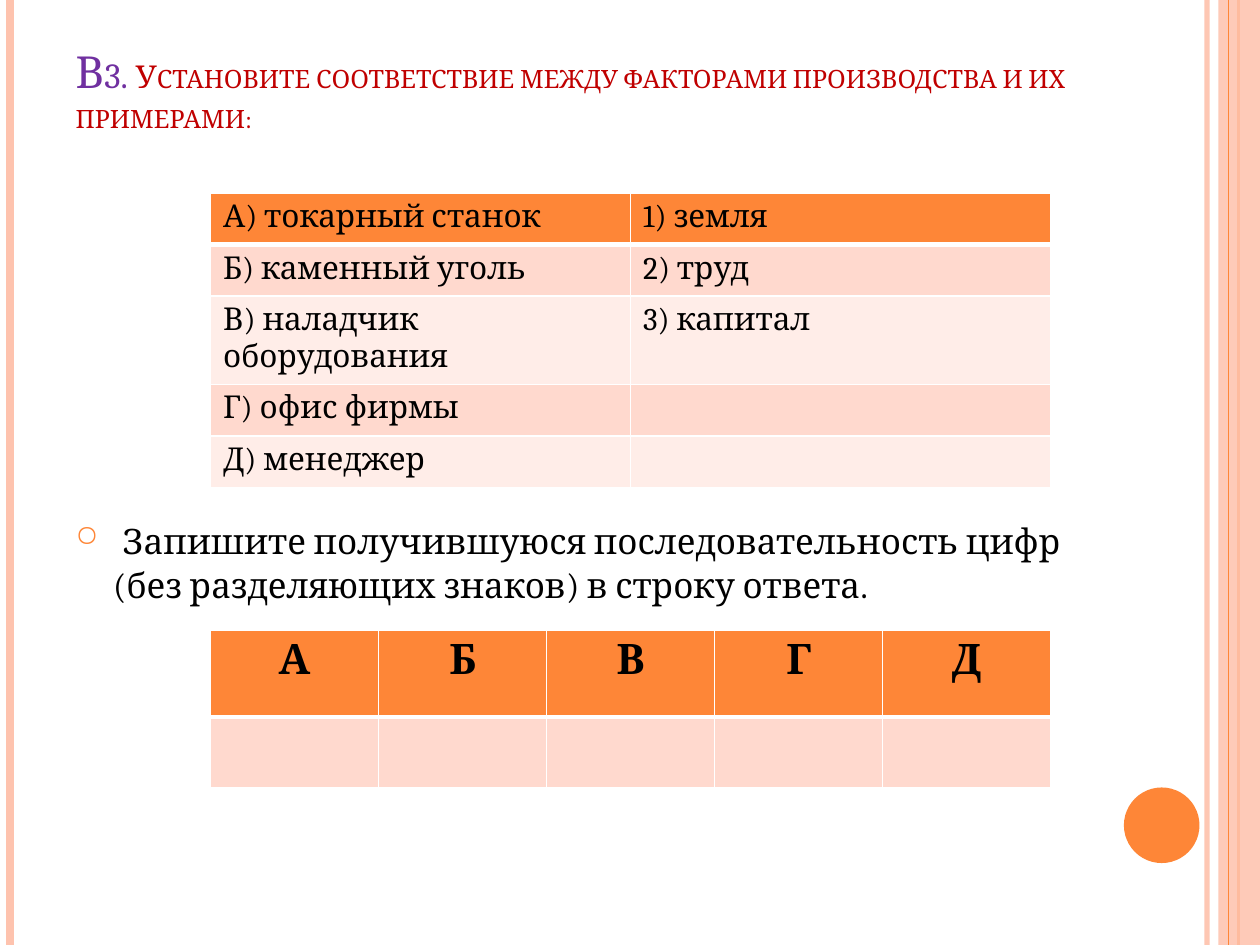
from dataclasses import dataclass

from lxml.etree import SubElement
from pptx import Presentation
from pptx.dml.color import RGBColor
from pptx.enum.shapes import MSO_CONNECTOR as Connector, MSO_SHAPE as Shape
from pptx.enum.text import MSO_ANCHOR as Anchor, MSO_AUTO_SIZE as AutoSize, PP_ALIGN as Align
from pptx.oxml.ns import qn
from pptx.util import Inches, Pt


@dataclass(frozen=True)
class Theme:
    font: str = "Cambria"
    accent: str = "FE8637"
    stripe: str = "FEC3AE"
    bands: tuple = ("FFD9CE", "FFEDE8")
    grid: str = "FFFFFF"
    ink: str = "000000"
    number: str = "7030A0"
    question: str = "C00000"
    number_size: float = 25.2
    question_size: float = 18
    cell_size: float = 18
    task_size: float = 20
    letter_size: float = 24


THEME = Theme()


def rgb(color):
    return RGBColor.from_string(color)


def set_alpha(fill_parent, percent):
    color = next(fill_parent.iter(qn("a:srgbClr")))
    SubElement(color, qn("a:alpha"), val=str(percent * 1000))


def add_run(paragraph, text, size, color=THEME.ink, bold=False):
    run = paragraph.add_run()
    run.text = text
    run.font.name = THEME.font
    run.font.size = Pt(size)
    run.font.bold = bold
    run.font.color.rgb = rgb(color)
    return run


def add_stripe(slide, x, width, color, alpha=None):
    """Vertical line over the full slide height."""
    stripe = slide.shapes.add_connector(
        Connector.STRAIGHT, Inches(x), 0, Inches(x), Inches(7.5))
    stripe.line.width = Pt(width)
    stripe.line.color.rgb = rgb(color)
    properties = stripe._element.spPr
    if alpha:
        set_alpha(properties, alpha)
    SubElement(properties, qn("a:effectLst"))


def add_block(slide, kind, left, top, width, height, color, alpha=None):
    block = slide.shapes.add_shape(
        kind, Inches(left), Inches(top), Inches(width), Inches(height))
    block.shadow.inherit = False
    block.fill.solid()
    block.fill.fore_color.rgb = rgb(color)
    block.line.fill.background()
    if alpha:
        set_alpha(block._element.spPr, alpha)


def add_frame(slide):
    """Decoration along the slide edges."""
    add_stripe(slide, 9.58, 3, THEME.stripe, alpha=93)
    add_stripe(slide, 0.08, 4.5, THEME.stripe)
    add_stripe(slide, 9.83, 1.5, THEME.accent)
    add_block(slide, Shape.RECTANGLE, 9.67, 0, 0.33, 7.5, THEME.stripe, alpha=87)
    add_stripe(slide, 9.75, 0.75, THEME.accent)
    add_block(slide, Shape.OVAL, 8.92, 6.25, 0.6, 0.6, THEME.accent)


def add_title(slide):
    title = slide.shapes.title
    title.left, title.top = Inches(0.5), Inches(0.3)
    title.width, title.height = Inches(8.17), Inches(1.11)
    frame = title.text_frame
    frame.auto_size = AutoSize.NONE
    frame.vertical_anchor = Anchor.BOTTOM
    frame.margin_bottom = Inches(0.34)
    heading = frame.paragraphs[0]
    heading.alignment = Align.LEFT
    for text, size, color in (
        ("В3. ", THEME.number_size, THEME.number),
        ("Установите соответствие между факторами производства и их примерами:",
         THEME.question_size, THEME.question),
    ):
        run = add_run(heading, text, size, color)
        run.font._element.set("cap", "small")


def add_task(slide):
    box = slide.shapes.add_textbox(
        Inches(0.5), Inches(4.02), Inches(8.17), Inches(0.85))
    box.text_frame.word_wrap = True
    task = box.text_frame.paragraphs[0]
    # Round accent bullet with a hanging indent
    properties = task._p.get_or_add_pPr()
    properties.set("marL", str(Inches(0.3)))
    properties.set("indent", str(-Inches(0.3)))
    bullet_color = SubElement(properties, qn("a:buClr"))
    SubElement(bullet_color, qn("a:srgbClr"), val=THEME.accent)
    SubElement(properties, qn("a:buSzPct"), val="70000")
    SubElement(properties, qn("a:buChar"), char="○")
    add_run(task, " ", THEME.letter_size)
    add_run(task, "Запишите получившуюся последовательность цифр "
                  "(без разделяющих знаков) в строку ответа.", THEME.task_size)


def set_borders(cell, row):
    """White grid, thicker under the header row."""
    properties = cell._tc.get_or_add_tcPr()
    widths = {"L": 1, "R": 1, "T": 3 if row == 1 else 1, "B": 3 if row == 0 else 1}
    for side, width in widths.items():
        border = SubElement(properties, qn(f"a:ln{side}"), w=str(Pt(width)))
        fill = SubElement(border, qn("a:solidFill"))
        SubElement(fill, qn("a:srgbClr"), val=THEME.grid)


def add_grid(slide, top, rows, heights, size, bold=False, align=Align.LEFT):
    width = Inches(6.67)
    column_count = len(rows[0])
    table = slide.shapes.add_table(
        len(rows), column_count, Inches(1.67), Inches(top),
        width, Inches(sum(heights))).table
    for column in table.columns:
        column.width = width // column_count
    for r, (texts, height) in enumerate(zip(rows, heights)):
        table.rows[r].height = Inches(height)
        for c, text in enumerate(texts):
            cell = table.cell(r, c)
            set_borders(cell, r)
            cell.fill.solid()
            cell.fill.fore_color.rgb = rgb(
                THEME.bands[(r - 1) % 2] if r else THEME.accent)
            if text:
                paragraph = cell.text_frame.paragraphs[0]
                paragraph.alignment = align
                add_run(paragraph, text, size, bold=bold)


def main():
    deck = Presentation()
    deck.slide_width, deck.slide_height = Inches(10), Inches(7.5)
    slide = deck.slides.add_slide(deck.slide_layouts[5])

    add_frame(slide)
    add_title(slide)
    add_task(slide)

    # Examples and factors to match
    matches = [
        ("А) токарный станок", "1) земля"),
        ("Б) каменный уголь", "2) труд"),
        ("В) наладчик оборудования", "3) капитал"),
        ("Г) офис фирмы", ""),
        ("Д) менеджер", ""),
    ]
    add_grid(slide, 1.53, matches, [0.41] * len(matches), THEME.cell_size)

    # Answer row
    letters = "АБВГД"
    add_grid(slide, 5, [letters, [""] * len(letters)], [0.69, 0.56],
             THEME.letter_size, bold=True, align=Align.CENTER)

    deck.save("out.pptx")


if __name__ == "__main__":
    main()
